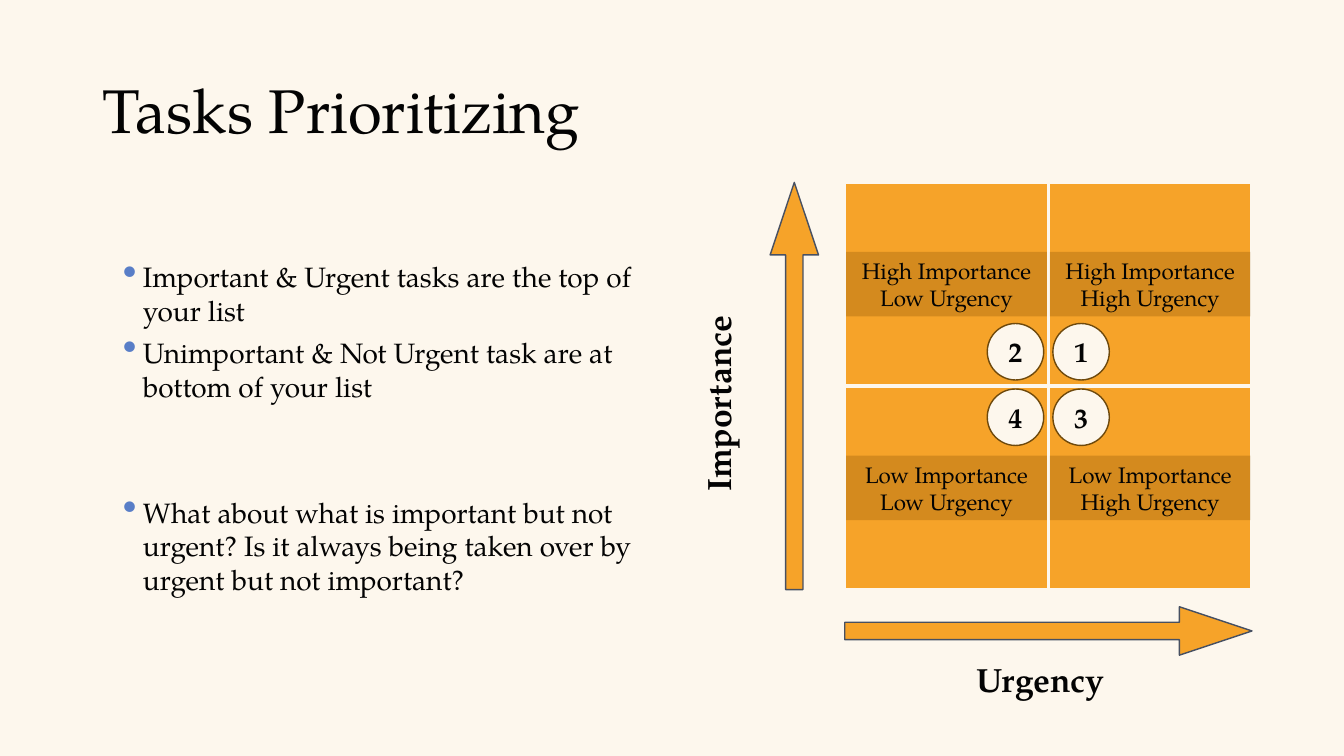
from lxml import etree
from pptx import Presentation
from pptx.dml.color import RGBColor
from pptx.enum import shapes, text
from pptx.oxml import ns
from pptx.util import Emu, Inches, Pt

FONT = "TeX Gyre Pagella"
COLORS = {"paper": "FDF7ED", "ink": "030303", "orange": "F6A329", "slate": "475062",
          "band": "885306", "ring": "6E490C", "bullet": "597EC7"}
WIDTH, HEIGHT = Inches(13.33), Inches(7.5)

# Positions and sizes are percentages of the slide's width and height
LEFT, TOP = 62.85, 24.13
CELL_W, CELL_H = 15.15, 26.93
BAND_W, BAND_H = 14.93, 8.53
BADGE_W, BADGE_H = 4.2, 7.47

# Column, row, rank, label lines
QUADRANTS = [
    (0, 0, "2", ["High Importance", "Low Urgency"]),
    (1, 0, "1", ["High Importance", "High Urgency"]),
    (0, 1, "4", ["Low Importance", "Low Urgency"]),
    (1, 1, "3", ["Low Importance", "High Urgency"]),
]
# Bullet text, space before
ADVICE = [
    ("Important & Urgent tasks are the top of your list", 0),
    ("Unimportant & Not Urgent task are at bottom of your list", 6),
    ("What about what is important but not urgent? Is it always being "
     "taken over by urgent but not important?", 66),
]


def color(name):
    return RGBColor.from_string(COLORS[name])


def area(x, y, w, h):
    return [Emu(round(share * side / 100))
            for share, side in zip((x, y, w, h), (WIDTH, HEIGHT) * 2)]


def add_block(slide, kind, place, fill, line=None, weight=1):
    block = slide.shapes.add_shape(kind, *area(*place))
    block.shadow.inherit = False
    block.fill.solid()
    block.fill.fore_color.rgb = color(fill)
    if line:
        block.line.color.rgb = color(line)
        block.line.width = Pt(weight)
    else:
        block.line.fill.background()
    return block


def write(shape, lines, size, bold=False, align=text.PP_ALIGN.LEFT):
    frame = shape.text_frame
    frame.word_wrap = True
    frame.vertical_anchor = text.MSO_ANCHOR.MIDDLE
    for i, words in enumerate(lines):
        paragraph = frame.add_paragraph() if i else frame.paragraphs[0]
        paragraph.alignment = align
        run = paragraph.add_run()
        run.text = words
        run.font.name, run.font.size, run.font.bold = FONT, Pt(size), bold
        run.font.color.rgb = color("ink")
    return frame


def add_label(slide, place, words, size, bold=False):
    label = slide.shapes.add_textbox(*area(*place))
    write(label, [words], size, bold)
    return label


def add_axis(slide, place, turn=0):
    axis = add_block(slide, shapes.MSO_SHAPE.UP_ARROW, place, "orange", "slate")
    axis.adjustments[0], axis.adjustments[1] = 0.36, 1.5
    axis.rotation = turn


def add_bullet(paragraph):
    props = paragraph._p.get_or_add_pPr()
    props.set("marL", str(Inches(0.4)))
    props.set("indent", str(-Inches(0.2)))
    tint = etree.SubElement(props, ns.qn("a:buClr"))
    etree.SubElement(tint, ns.qn("a:srgbClr"), val=COLORS["bullet"])
    etree.SubElement(props, ns.qn("a:buSzPct"), val="145000")
    etree.SubElement(props, ns.qn("a:buChar"), char="•")


def add_advice(slide):
    panel = add_block(slide, shapes.MSO_SHAPE.RECTANGLE, (6.9, 29.73, 43.13, 53.73), "paper")
    frame = write(panel, [words for words, _ in ADVICE], 20)
    for paragraph, (_, gap) in zip(frame.paragraphs, ADVICE):
        add_bullet(paragraph)
        paragraph.space_before = Pt(gap)


def add_cell(slide, col, row):
    add_block(slide, shapes.MSO_SHAPE.RECTANGLE,
              (LEFT + col * CELL_W, TOP + row * CELL_H, CELL_W, CELL_H),
              "orange", "paper", 2.25)


def add_band(slide, col, row, lines):
    x = LEFT + col * CELL_W + (CELL_W - BAND_W) / 2
    y = TOP + row * CELL_H + (CELL_H - BAND_H) / 2
    band = add_block(slide, shapes.MSO_SHAPE.RECTANGLE, (x, y, BAND_W, BAND_H), "band")
    tint = band.fill._xPr.find(".//" + ns.qn("a:srgbClr"))
    etree.SubElement(tint, ns.qn("a:alpha"), val="30000")
    write(band, lines, 16, align=text.PP_ALIGN.CENTER)


def add_badge(slide, col, row, rank):
    # Badges sit around the point where the four cells meet
    x = LEFT + CELL_W + (2 * col - 1) * 2.44 - BADGE_W / 2
    y = TOP + CELL_H - 0.2 + (2 * row - 1) * 4.33 - BADGE_H / 2
    badge = add_block(slide, shapes.MSO_SHAPE.OVAL, (x, y, BADGE_W, BADGE_H), "paper", "ring")
    frame = write(badge, [rank], 20, True, text.PP_ALIGN.CENTER)
    frame.margin_left = frame.margin_right = frame.margin_top = frame.margin_bottom = 0


def main():
    deck = Presentation()
    deck.slide_width, deck.slide_height = WIDTH, HEIGHT
    slide = deck.slides.add_slide(deck.slide_layouts[6])
    slide.background.fill.solid()
    slide.background.fill.fore_color.rgb = color("paper")

    # Title
    title = add_label(slide, (6.9, 5.33, 86.25, 19.33), "Tasks Prioritizing", 44)
    title.text_frame.paragraphs[0].line_spacing = 0.9

    # Matrix cells
    for col, row, _, _ in QUADRANTS:
        add_cell(slide, col, row)

    # Axes and their names
    add_axis(slide, (57.3, TOP, 3.6, 2 * CELL_H))
    add_axis(slide, (76.2, 56.53, 3.6, 2 * CELL_H), 90)
    add_label(slide, (71.93, 86.53, 12.23, 6.67), "Urgency", 24, True)
    importance = add_label(slide, (44.85, 47.73, 17.18, 6.67), "Importance", 24, True)
    importance.rotation = 270

    # Quadrant labels and ranks
    for col, row, rank, lines in QUADRANTS:
        add_band(slide, col, row, lines)
        add_badge(slide, col, row, rank)

    # Advice
    add_advice(slide)
    deck.save("out.pptx")


if __name__ == "__main__":
    main()
